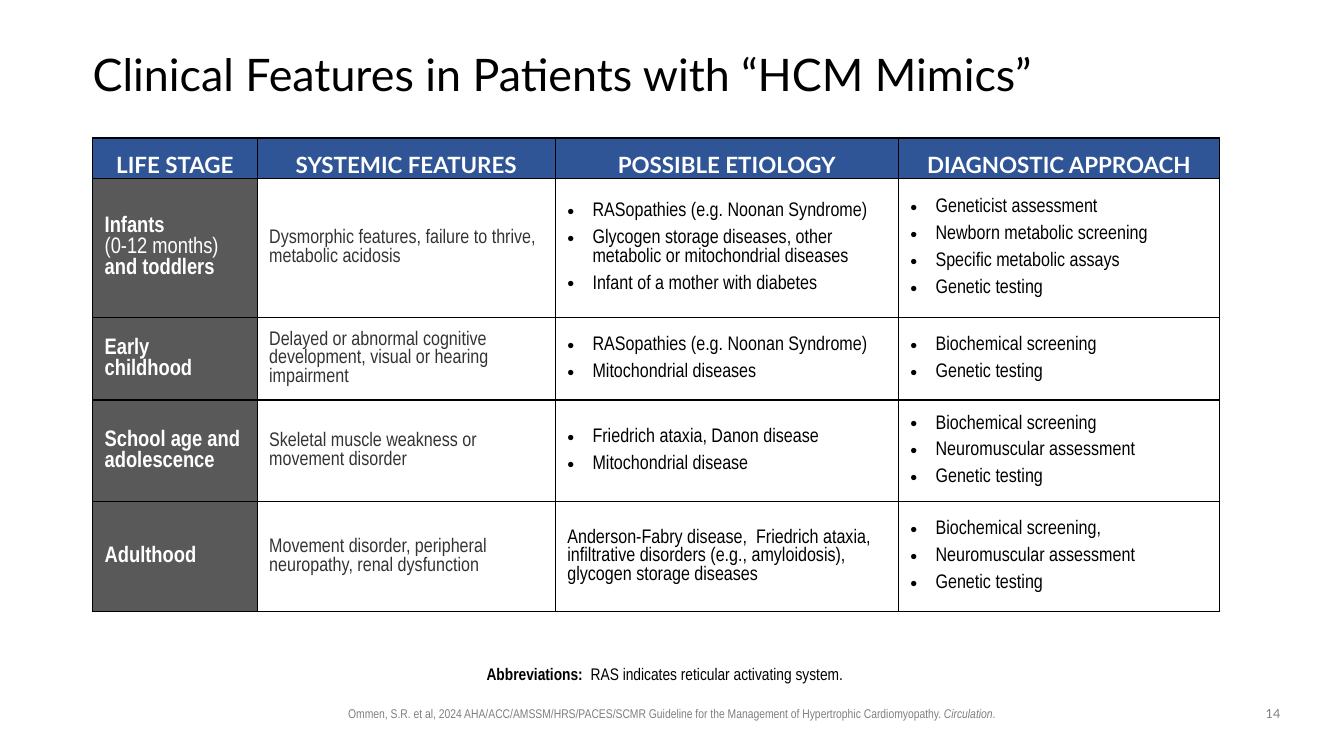
from lxml import etree
from pptx import Presentation
from pptx.dml.color import RGBColor
from pptx.enum.text import MSO_ANCHOR, PP_ALIGN
from pptx.oxml.ns import qn
from pptx.util import Pt

CENTER, LEFT = PP_ALIGN.CENTER, PP_ALIGN.LEFT
MIDDLE, TOP = MSO_ANCHOR.MIDDLE, MSO_ANCHOR.TOP

HEADING_FONT, BODY_FONT = "Lato", "Arial Narrow"
BLACK, WHITE, GRAY = "000000", "FFFFFF", "808080"
HEADER_BLUE, STAGE_GRAY, FEATURE_GRAY = "2F5597", "595959", "333333"

COLUMN_WIDTHS = [117.5, 213, 245, 229.5]
ROW_HEIGHTS = [28.8, 99.4, 59, 72.7, 78.5]
HEADERS = ["LIFE STAGE", "SYSTEMIC FEATURES", "POSSIBLE ETIOLOGY", "DIAGNOSTIC APPROACH"]

# Stage lines as (text, bold), systemic features, etiology, diagnostic approach.
# A list becomes bullets; a string stays plain text.
LIFE_STAGES = [
    ([("Infants", True), ("(0-12 months)", False), ("and toddlers", True)],
     "Dysmorphic features, failure to thrive, metabolic acidosis",
     ["RASopathies (e.g. Noonan Syndrome)",
      "Glycogen storage diseases, other metabolic or mitochondrial diseases",
      "Infant of a mother with diabetes"],
     ["Geneticist assessment", "Newborn metabolic screening",
      "Specific metabolic assays", "Genetic testing"]),
    ([("Early", True), ("childhood", True)],
     "Delayed or abnormal cognitive development, visual or hearing impairment",
     ["RASopathies (e.g. Noonan Syndrome)", "Mitochondrial diseases"],
     ["Biochemical screening", "Genetic testing"]),
    ([("School age and adolescence", True)],
     "Skeletal muscle weakness or movement disorder",
     ["Friedrich ataxia, Danon disease", "Mitochondrial disease"],
     ["Biochemical screening", "Neuromuscular assessment", "Genetic testing"]),
    ([("Adulthood", True)],
     "Movement disorder, peripheral neuropathy, renal dysfunction",
     "Anderson-Fabry disease,  Friedrich ataxia, infiltrative disorders "
     "(e.g., amyloidosis), glycogen storage diseases",
     ["Biochemical screening,", "Neuromuscular assessment", "Genetic testing"]),
]


def rgb(value):
    return RGBColor.from_string(value)


def add_span(para, text, size, color, font=BODY_FONT, bold=False, italic=False):
    span = para.add_run()
    span.text = text
    span.font.name = font
    span.font.size = Pt(size)
    span.font.bold = bold
    span.font.italic = italic
    span.font.color.rgb = rgb(color)


def add_text_box(page, left, top, width, height, insets=(7.2, 3.6, 7.2, 3.6),
                 anchor=TOP, align=LEFT, line_spacing=1.0):
    """Add an empty text box and return its first paragraph."""
    frame = page.shapes.add_textbox(Pt(left), Pt(top), Pt(width), Pt(height)).text_frame
    frame.word_wrap = True
    frame.vertical_anchor = anchor
    frame.margin_left, frame.margin_top, frame.margin_right, frame.margin_bottom = map(Pt, insets)
    para = frame.paragraphs[0]
    para.alignment = align
    para.line_spacing = line_spacing
    return para


def set_indent(para, left, first=0, bullet=False):
    properties = para._p.get_or_add_pPr()
    properties.set("marL", str(Pt(left)))
    properties.set("indent", str(Pt(first)))
    if bullet:
        etree.SubElement(properties, qn("a:buFont")).set("typeface", "Arial")
        etree.SubElement(properties, qn("a:buChar")).set("char", "•")


def style_cell(cell, fill=None):
    """Set margins, anchor, fill and black borders on all four sides."""
    cell.margin_left = cell.margin_right = Pt(3.6)
    cell.margin_top = cell.margin_bottom = Pt(0)
    cell.vertical_anchor = MIDDLE
    if fill:
        cell.fill.solid()
        cell.fill.fore_color.rgb = rgb(fill)
    else:
        cell.fill.background()
    properties = cell._tc.get_or_add_tcPr()
    for position, side in enumerate(("lnL", "lnR", "lnT", "lnB")):
        line = etree.Element(qn(f"a:{side}"), w=str(Pt(1)))
        solid = etree.SubElement(line, qn("a:solidFill"))
        etree.SubElement(solid, qn("a:srgbClr"), val=BLACK)
        properties.insert(position, line)


def fill_header(cell, text):
    style_cell(cell, HEADER_BLUE)
    para = cell.text_frame.paragraphs[0]
    para.alignment = CENTER
    para.line_spacing = 1.5
    add_span(para, text, 16, WHITE, HEADING_FONT, bold=True)


def fill_stage(cell, lines):
    style_cell(cell, STAGE_GRAY)
    para = cell.text_frame.paragraphs[0]
    set_indent(para, 5)
    for number, (text, bold) in enumerate(lines):
        if number:
            para.add_line_break()
        add_span(para, text, 16, WHITE, bold=bold)


def fill_details(cell, content, color=BLACK):
    style_cell(cell)
    bulleted = isinstance(content, list)
    frame = cell.text_frame
    for number, text in enumerate(content if bulleted else [content]):
        para = frame.add_paragraph() if number else frame.paragraphs[0]
        if number:
            para.space_before = Pt(6)
        if bulleted:
            set_indent(para, 23, -18, bullet=True)
        else:
            set_indent(para, 5)
        add_span(para, text, 14, color)


def add_feature_table(page):
    table = page.shapes.add_table(
        len(ROW_HEIGHTS), len(COLUMN_WIDTHS), Pt(66.2), Pt(98.6),
        Pt(sum(COLUMN_WIDTHS)), Pt(sum(ROW_HEIGHTS))).table
    table.horz_banding = False
    for column, width in zip(table.columns, COLUMN_WIDTHS):
        column.width = Pt(width)
    for row, height in zip(table.rows, ROW_HEIGHTS):
        row.height = Pt(height)
    for column, header in enumerate(HEADERS):
        fill_header(table.cell(0, column), header)
    for row, (stage, features, etiology, approach) in enumerate(LIFE_STAGES, 1):
        fill_stage(table.cell(row, 0), stage)
        fill_details(table.cell(row, 1), features, FEATURE_GRAY)
        fill_details(table.cell(row, 2), etiology)
        fill_details(table.cell(row, 3), approach)


def main():
    deck = Presentation()
    deck.slide_width, deck.slide_height = Pt(960), Pt(540)
    page = deck.slides.add_slide(deck.slide_layouts[6])

    citation = add_text_box(page, 211.7, 500.4, 536.4, 18, align=CENTER)
    add_span(citation, "Ommen, S.R. et al, 2024 AHA/ACC/AMSSM/HRS/PACES/SCMR Guideline "
             "for the Management of Hypertrophic Cardiomyopathy. ", 9, GRAY)
    add_span(citation, "Circulation", 9, GRAY, italic=True)
    add_span(citation, ".", 9, GRAY)

    title = add_text_box(page, 66.2, 28.8, 805, 51.8, (0, 0, 0, 0), MIDDLE, line_spacing=0.9)
    add_span(title, "Clinical Features in Patients with “HCM Mimics”", 32, BLACK, HEADING_FONT)

    add_feature_table(page)

    abbreviations = add_text_box(page, 187.2, 472.3, 585.4, 15.8, (0, 3.6, 7.2, 3.6),
                                 align=CENTER, line_spacing=0.9)
    add_span(abbreviations, "Abbreviations:  ", 12, BLACK, bold=True)
    add_span(abbreviations, "RAS indicates reticular activating system. ", 12, BLACK)

    page_number = add_text_box(page, 894.2, 500.4, 30.2, 18.7, align=CENTER)
    add_span(page_number, "14", 9, GRAY, HEADING_FONT)

    deck.save("out.pptx")


if __name__ == "__main__":
    main()
